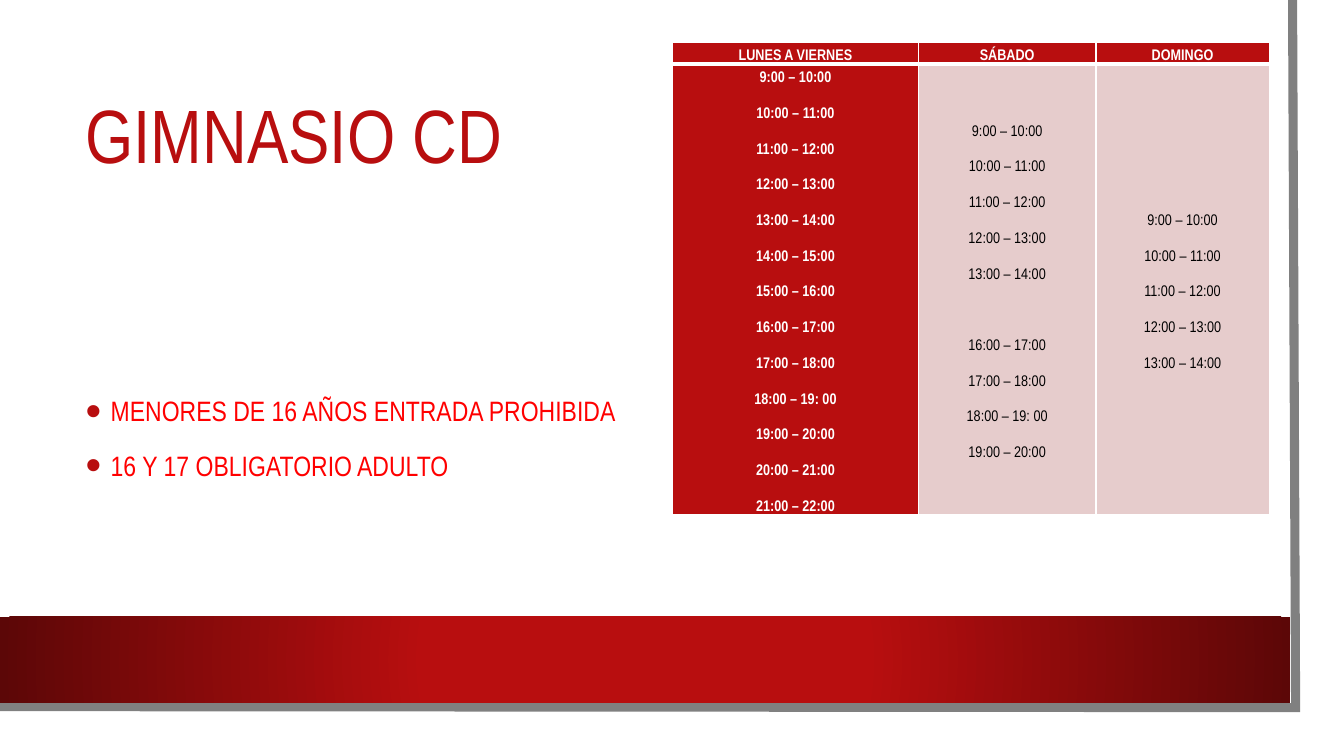
from lxml.etree import SubElement
from pptx import Presentation
from pptx.dml.color import RGBColor
from pptx.enum.shapes import MSO_SHAPE
from pptx.enum.text import MSO_ANCHOR, PP_ALIGN
from pptx.oxml import parse_xml
from pptx.oxml.ns import nsdecls, qn
from pptx.util import Inches, Pt

RED, WHITE, PINK = "B80E0F", "FFFFFF", "E6CCCC"


def rgb(color):
    return RGBColor.from_string(color)


def write(frame, lines, size, color, bold=False, align=PP_ALIGN.LEFT,
          spacing=1.0, before=0, after=0, bullet=None):
    frame.word_wrap = True
    frame.vertical_anchor = MSO_ANCHOR.MIDDLE
    for i, line in enumerate(lines):
        paragraph = frame.paragraphs[0] if i == 0 else frame.add_paragraph()
        paragraph.alignment = align
        paragraph.line_spacing = spacing
        paragraph.space_before = Pt(before if i else 0)
        paragraph.space_after = Pt(after)
        if bullet:
            props = paragraph._p.get_or_add_pPr()
            props.set("marL", str(Inches(0.25)))
            props.set("indent", str(-Inches(0.25)))
            bullet_color = SubElement(props, qn("a:buClr"))
            SubElement(bullet_color, qn("a:srgbClr"), val=RED)
            SubElement(props, qn("a:buSzPct"), val="160000")
            SubElement(props, qn("a:buFont"), typeface="Arial")
            SubElement(props, qn("a:buChar"), char=bullet)
        run = paragraph.add_run()
        run.text = line
        run.font.name = "Arial Narrow"
        run.font.size = Pt(size)
        run.font.bold = bold
        run.font.color.rgb = rgb(color)


prs = Presentation()
prs.slide_width, prs.slide_height = Inches(13.33), Inches(7.5)
slide = prs.slides.add_slide(prs.slide_layouts[6])

# White sheet with its grey edge
sheet = slide.shapes.add_shape(MSO_SHAPE.RECTANGLE, 0, 0, Inches(13.1), Inches(7.27))
sheet.shadow.inherit = False
sheet.fill.solid()
sheet.fill.fore_color.rgb = rgb(WHITE)
sheet.line.fill.background()

outline = slide.shapes.build_freeform(Inches(12.82), 0)
outline.add_line_segments([(Inches(12.85), Inches(7.02)),
                           (Inches(-0.03), Inches(7.01))], close=False)
edge = outline.convert_to_shape()
edge.shadow.inherit = False
edge.fill.background()
edge.line.color.rgb = rgb("808080")
edge.line.width = Pt(6.5)
SubElement(edge._element.spPr.find(qn("a:ln")), qn("a:miter"), lim="800000")

# Red band with a radial gradient
band = slide.shapes.add_shape(MSO_SHAPE.RECTANGLE, 0, Inches(6.12),
                              Inches(12.8), Inches(0.85))
band.shadow.inherit = False
band.line.fill.background()
gradient = parse_xml(
    f'<a:gradFill {nsdecls("a")} rotWithShape="1"><a:gsLst>'
    f'<a:gs pos="34000"><a:srgbClr val="{RED}"/></a:gs>'
    '<a:gs pos="100000"><a:srgbClr val="5C0707"/></a:gs></a:gsLst>'
    '<a:path path="circle"><a:fillToRect l="50000" t="50000" r="50000" b="50000"/>'
    '</a:path></a:gradFill>')
band._element.spPr.find(qn("a:prstGeom")).addnext(gradient)

# Title and entry rules
title = slide.shapes.add_textbox(Inches(0.75), Inches(0.75), Inches(11.37), Inches(1.26))
write(title.text_frame, ["GIMNASIO CD"], 54, RED, spacing=0.9)

rules = slide.shapes.add_textbox(Inches(0.75), Inches(2.5), Inches(5.57), Inches(3.62))
write(rules.text_frame,
      ["MENORES DE 16 AÑOS ENTRADA PROHIBIDA", "16 Y 17 OBLIGATORIO ADULTO"],
      20, "FF0000", spacing=1.2, before=10, bullet="•")

# Timetable
hours = [f"{h}:00 – {h + 1}:00" for h in range(9, 22)]
hours[9] = "18:00 – 19: 00"
morning, evening = hours[:5], hours[7:11]
days = [("LUNES A VIERNES", 2.44, hours),
        ("SÁBADO", 1.76, morning + evening),
        ("DOMINGO", 1.72, morning)]

timetable = slide.shapes.add_table(2, 3, Inches(6.67), Inches(0.42),
                                   Inches(5.92), Inches(4.1)).table
timetable.first_row = timetable.horz_banding = False
timetable.rows[0].height, timetable.rows[1].height = Inches(0.16), Inches(3.94)

for col, (day, width, slots) in enumerate(days):
    timetable.columns[col].width = Inches(width)
    for row, lines in enumerate([[day], slots]):
        cell = timetable.cell(row, col)
        strong = row == 0 or col == 0
        cell.margin_left = cell.margin_right = Inches(0.06)
        cell.margin_top = cell.margin_bottom = 0
        write(cell.text_frame, lines, 11, WHITE if strong else "000000",
              bold=strong, align=PP_ALIGN.CENTER, spacing=Pt(15.5), after=10)
        cell.vertical_anchor = MSO_ANCHOR.MIDDLE
        header_rule = {0: "lnB", 1: "lnT"}[row]
        for side in ("lnL", "lnR", "lnT", "lnB"):
            border = SubElement(cell._tc.get_or_add_tcPr(), qn(f"a:{side}"),
                                w=str(Pt(3 if side == header_rule else 1)))
            border_fill = SubElement(border, qn("a:solidFill"))
            SubElement(border_fill, qn("a:srgbClr"), val=WHITE)
        cell.fill.solid()
        cell.fill.fore_color.rgb = rgb(RED if strong else PINK)

# Midday break on Saturday, one slot high
saturday = timetable.cell(1, 1).text_frame
saturday.paragraphs[len(morning)].space_before = Pt(25.5)

prs.save("out.pptx")
